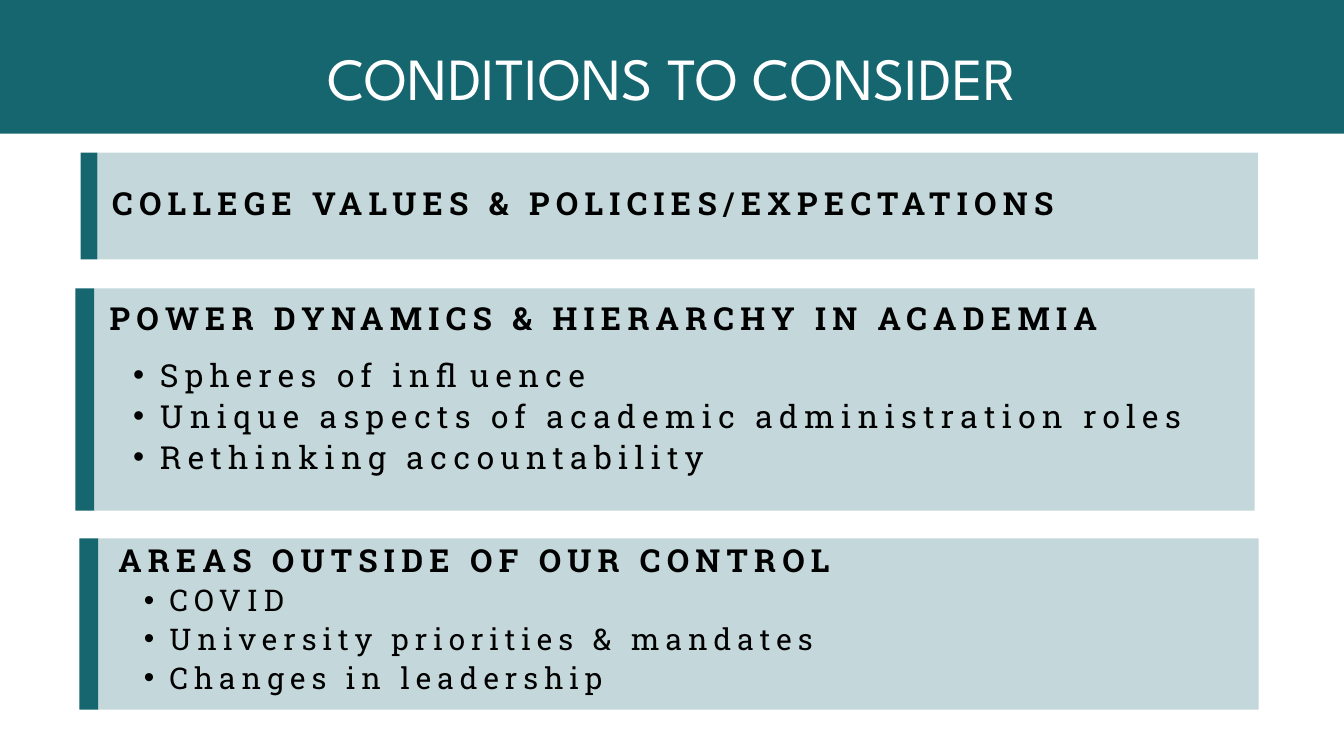
from lxml.etree import SubElement
from pptx import Presentation
from pptx.dml.color import RGBColor
from pptx.enum.shapes import MSO_SHAPE
from pptx.enum.text import MSO_ANCHOR, MSO_AUTO_SIZE, PP_ALIGN
from pptx.oxml.ns import qn
from pptx.util import Inches, Pt

# Content
TITLE = "CONDITIONS TO CONSIDER"
TEAL, WHITE, BLACK = "166670", "FFFFFF", "000000"
TITLE_FONT, BODY_FONT = "League Spartan", "Roboto Slab"
PANEL_WIDTH, PANEL_ALPHA = 17.27, 25

# Each panel: left, top, accent width, height, and its text boxes.
# Each text box: position, heading, bullets, bullet size, bullet indent.
PANELS = [
    {"box": (1.2, 2.27, 0.25, 1.59), "texts": [
        {"at": (1.67, 2.69, 16.67, 0.7),
         "heading": "COLLEGE VALUES & POLICIES/EXPECTATIONS"},
    ]},
    {"box": (1.12, 4.29, 0.28, 3.31), "texts": [
        {"at": (1.63, 4.4, 16.83, 0.7),
         "heading": "POWER DYNAMICS & HIERARCHY IN ACADEMIA"},
        {"at": (1.58, 5.24, 16.83, 1.91), "size": 34, "indent": 0.4,
         "bullets": ["Spheres of influence",
                     "Unique aspects of academic administration roles",
                     "Rethinking accountability"]},
    ]},
    {"box": (1.18, 8.01, 0.28, 2.55), "texts": [
        {"at": (1.76, 8, 16.69, 2.39), "size": 32, "indent": 0.38,
         "heading": "AREAS OUTSIDE OF OUR CONTROL",
         "bullets": ["COVID",
                     "University priorities & mandates",
                     "Changes in leadership"]},
    ]},
]


def color(value):
    return RGBColor.from_string(value)


def add_rectangle(left, top, width, height, alpha=None):
    shape = slide.shapes.add_shape(MSO_SHAPE.RECTANGLE, Inches(left), Inches(top),
                                   Inches(width), Inches(height))
    shape.shadow.inherit = False
    shape.fill.solid()
    shape.fill.fore_color.rgb = color(TEAL)
    shape.line.fill.background()
    if alpha is not None:
        fill = shape._element.spPr.find(qn("a:solidFill"))
        SubElement(fill[0], qn("a:alpha"), val=str(alpha * 1000))


def prepare_frame(shape, left, top, width, height):
    """Place a text shape in front of the panels and clear its margins."""
    shape.left, shape.top = Inches(left), Inches(top)
    shape.width, shape.height = Inches(width), Inches(height)
    slide.shapes._spTree.append(shape._element)
    frame = shape.text_frame
    frame.word_wrap = True
    frame.auto_size = MSO_AUTO_SIZE.NONE
    frame.vertical_anchor = MSO_ANCHOR.TOP
    frame.margin_left = frame.margin_right = 0
    frame.margin_top = frame.margin_bottom = 0
    return frame


def write(frame, text, size, leading=1.3, font=BODY_FONT, text_color=BLACK,
          bold=False, align=PP_ALIGN.LEFT, tracking=0.2, indent=0):
    """Write one paragraph; an indent makes it a bullet."""
    paragraph = frame.paragraphs[0]
    if paragraph.runs:
        paragraph = frame.add_paragraph()
    properties = paragraph._p.get_or_add_pPr()
    properties.set("marL", str(Inches(2 * indent)))
    properties.set("indent", str(-Inches(indent)))
    if indent:
        paragraph.level = 1
        SubElement(properties, qn("a:buFont"), typeface="Arial")
        SubElement(properties, qn("a:buChar"), char="•")
    else:
        SubElement(properties, qn("a:buNone"))
    paragraph.alignment = align
    paragraph.line_spacing = Pt(size * leading)
    paragraph.space_before = paragraph.space_after = Pt(0)
    run = paragraph.add_run()
    run.text = text
    run.font.size, run.font.name, run.font.bold = Pt(size), font, bold
    run.font.color.rgb = color(text_color)
    run._r.get_or_add_rPr().set("spc", str(round(size * tracking * 100)))


presentation = Presentation()
presentation.slide_width, presentation.slide_height = Inches(20), Inches(11.25)
slide = presentation.slides.add_slide(presentation.slide_layouts[3])
title, *bodies = slide.placeholders
free_bodies = iter(bodies)

# Title band
add_rectangle(0, 0, 20, 1.99)
title_frame = prepare_frame(title, 0.37, 0.6, 19.26, 1.05)
write(title_frame, TITLE, 64, leading=1.2, font=TITLE_FONT, text_color=WHITE,
      align=PP_ALIGN.CENTER, tracking=0)

# Panels with an accent bar; lists go in the body placeholders
for panel in PANELS:
    left, top, accent_width, height = panel["box"]
    add_rectangle(left + accent_width, top, PANEL_WIDTH, height, alpha=PANEL_ALPHA)
    add_rectangle(left, top, accent_width, height)
    for text in panel["texts"]:
        if "bullets" in text:
            shape = next(free_bodies)
        else:
            shape = slide.shapes.add_textbox(0, 0, 0, 0)
        frame = prepare_frame(shape, *text["at"])
        if "heading" in text:
            write(frame, text["heading"], 34, bold=True)
        for bullet in text.get("bullets", []):
            write(frame, bullet, text["size"], indent=text["indent"])

presentation.save("out.pptx")
